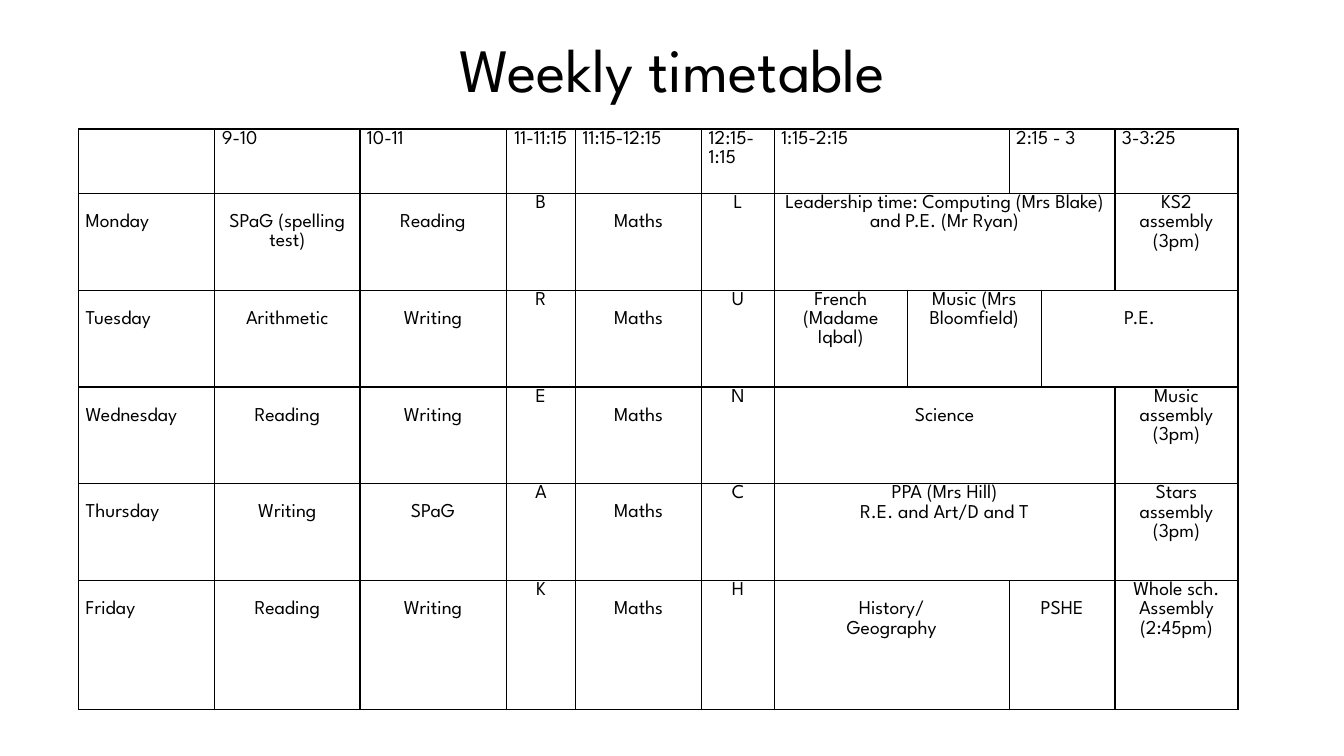
from lxml import etree
from pptx import Presentation
from pptx.dml.color import RGBColor
from pptx.enum.text import MSO_ANCHOR, PP_ALIGN
from pptx.oxml.ns import qn
from pptx.util import Pt

PX = 9144
FONT = "League Spartan"
BLACK = RGBColor(0, 0, 0)
WHITE = RGBColor(255, 255, 255)
LEFT, CENTER = PP_ALIGN.LEFT, PP_ALIGN.CENTER
TOP, MIDDLE = MSO_ANCHOR.TOP, MSO_ANCHOR.MIDDLE
TITLE_ONLY = 5

TITLE_BOX = (92, 40, 1150, 63)
TIMETABLE_BOX = (78, 128, 1150, 576)
COLUMN_WIDTHS = [135, 144, 145, 69, 125, 72, 132, 101, 32, 73, 122]
ROW_HEIGHTS = [64, 96, 96, 96, 96, 128]
SIDE_MARGIN = 7
LINE_DROP = 19

TIMES = [
    (1, 1, "9-10"), (2, 1, "10-11"), (3, 1, "11-11:15"), (4, 1, "11:15-12:15"),
    (5, 1, "12:15-1:15"), (6, 2, "1:15-2:15"), (8, 2, "2:15 - 3"), (10, 1, "3-3:25"),
]
MORNINGS = [
    ("Monday", "SPaG (spelling test)", "Reading", "B", "Maths", "L"),
    ("Tuesday", "Arithmetic", "Writing", "R", "Maths", "U"),
    ("Wednesday", "Reading", "Writing", "E", "Maths", "N"),
    ("Thursday", "Writing", "SPaG", "A", "Maths", "C"),
    ("Friday", "Reading", "Writing", "K", "Maths", "H"),
]
BREAK_COLUMNS = (3, 5)
AFTERNOONS = [
    [(6, 4, "Leadership time: Computing (Mrs Blake) and P.E. (Mr Ryan)", 0),
     (10, 1, "KS2 assembly (3pm)", 0)],
    [(6, 1, "French (Madame Iqbal)", 0),
     (7, 2, "Music (Mrs Bloomfield)", 0),
     (9, 2, "P.E.", LINE_DROP)],
    [(6, 4, "Science", LINE_DROP),
     (10, 1, "Music assembly (3pm)", 0)],
    [(6, 4, "PPA (Mrs Hill)\nR.E. and Art/D and T", 0),
     (10, 1, "Stars assembly (3pm)", 0)],
    [(6, 2, "History/\nGeography", LINE_DROP),
     (8, 2, "PSHE", LINE_DROP),
     (10, 1, "Whole sch. Assembly (2:45pm)", 0)],
]


def format_text(frame, size, align, spacing):
    for paragraph in frame.paragraphs:
        paragraph.alignment = align
        paragraph.line_spacing = spacing
        paragraph.font.size = Pt(size)
        for run in paragraph.runs:
            run.font.name = FONT
            run.font.size = Pt(size)
            run.font.color.rgb = BLACK


def add_title(slide, box):
    title = slide.shapes.title
    title.left, title.top, title.width, title.height = [v * PX for v in box]
    frame = title.text_frame
    frame.text = "Weekly timetable"
    frame.word_wrap = True
    frame.vertical_anchor = MIDDLE
    format_text(frame, 44, CENTER, 0.9)


def style_cell(cell):
    cell.fill.solid()
    cell.fill.fore_color.rgb = WHITE
    cell.margin_left = cell.margin_right = SIDE_MARGIN * PX
    cell.margin_top = cell.margin_bottom = 0
    cell.vertical_anchor = TOP
    format_text(cell.text_frame, 14, LEFT, 1.07)
    properties = cell._tc.get_or_add_tcPr()
    for position, edge in enumerate(("a:lnL", "a:lnR", "a:lnT", "a:lnB")):
        border = etree.Element(qn(edge), w=str(Pt(1)))
        fill = etree.SubElement(border, qn("a:solidFill"))
        etree.SubElement(fill, qn("a:srgbClr"), val=str(BLACK))
        properties.insert(position, border)


def fill_cell(table, row, column, span, text, drop, align):
    cell = table.cell(row, column)
    if span > 1:
        cell.merge(table.cell(row, column + span - 1))
    cell.text_frame.text = text
    cell.margin_top = drop * PX
    format_text(cell.text_frame, 14, align, 1.07)


def add_timetable(slide, box):
    table = slide.shapes.add_table(
        len(ROW_HEIGHTS), len(COLUMN_WIDTHS), *[v * PX for v in box]).table
    table.first_row = table.horz_banding = False
    for column, width in zip(table.columns, COLUMN_WIDTHS):
        column.width = width * PX
    for row, height in zip(table.rows, ROW_HEIGHTS):
        row.height = height * PX
    for cell in table.iter_cells():
        style_cell(cell)

    for column, span, time in TIMES:
        align = CENTER if column == 3 else LEFT
        fill_cell(table, 0, column, span, time, 0, align)
    for row, (morning, afternoon) in enumerate(zip(MORNINGS, AFTERNOONS), 1):
        for column, text in enumerate(morning):
            drop = 0 if column in BREAK_COLUMNS else LINE_DROP
            align = CENTER if column else LEFT
            fill_cell(table, row, column, 1, text, drop, align)
        for column, span, text, drop in afternoon:
            fill_cell(table, row, column, span, text, drop, CENTER)


def main():
    deck = Presentation()
    deck.slide_width, deck.slide_height = 1333 * PX, 750 * PX
    slide = deck.slides.add_slide(deck.slide_layouts[TITLE_ONLY])
    add_title(slide, TITLE_BOX)
    add_timetable(slide, TIMETABLE_BOX)
    deck.save("out.pptx")


if __name__ == "__main__":
    main()
